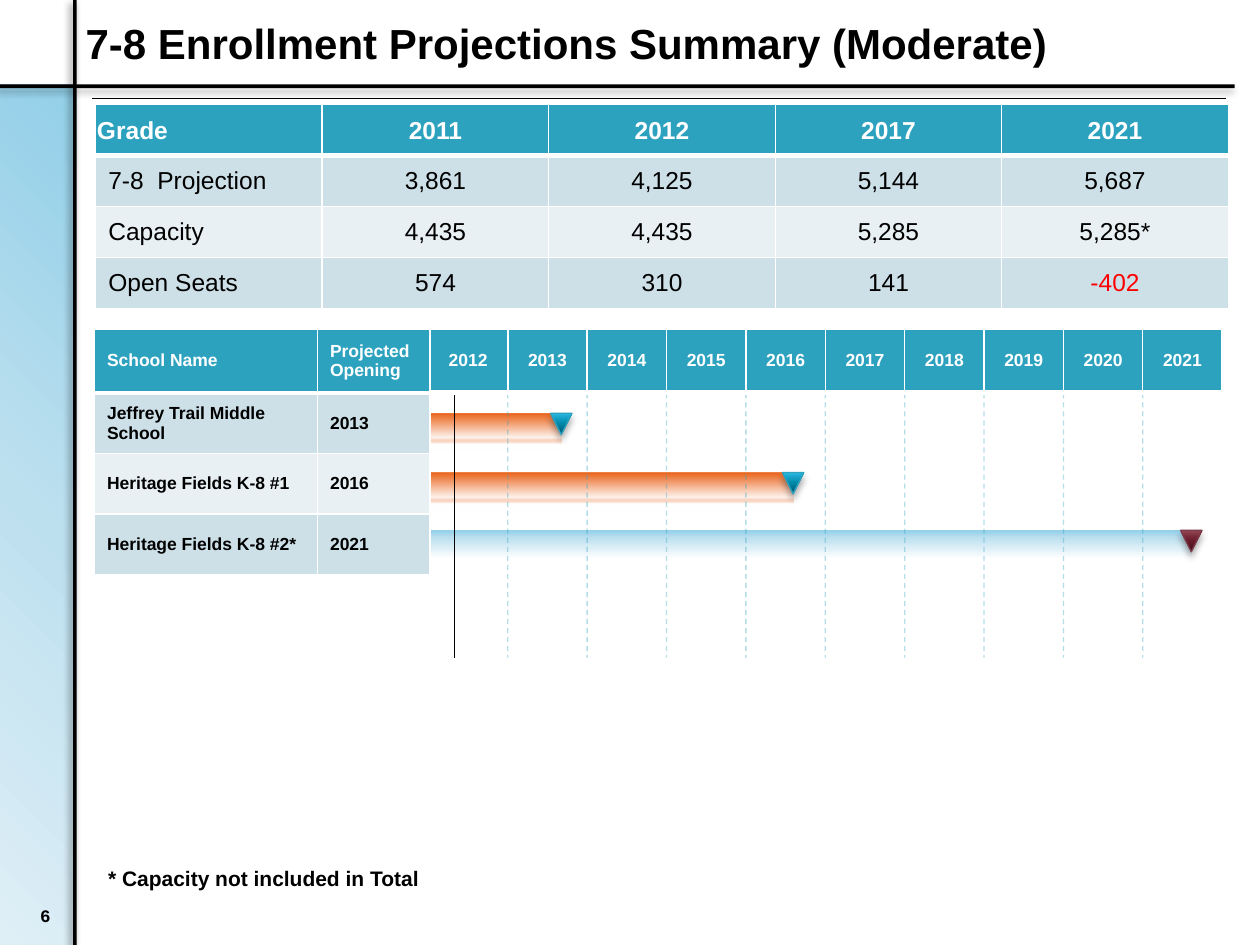
"""Builds the 7-8 enrollment projections slide with its school opening timeline."""
from lxml import etree
from pptx import Presentation
from pptx.dml.color import RGBColor
from pptx.enum.dml import MSO_LINE
from pptx.enum.shapes import MSO_CONNECTOR, MSO_SHAPE
from pptx.enum.text import MSO_ANCHOR, MSO_AUTO_SIZE, PP_ALIGN
from pptx.oxml.ns import qn
from pptx.util import Inches, Pt

BAR, MARKER = MSO_SHAPE.RECTANGLE, MSO_SHAPE.FLOWCHART_MERGE
STRAIGHT, DASH = MSO_CONNECTOR.STRAIGHT, MSO_LINE.DASH
LEFT, CENTER, RIGHT = PP_ALIGN.LEFT, PP_ALIGN.CENTER, PP_ALIGN.RIGHT
TOP, MIDDLE, BOTTOM = MSO_ANCHOR.TOP, MSO_ANCHOR.MIDDLE, MSO_ANCHOR.BOTTOM

BLACK = RGBColor(0x00, 0x00, 0x00)
WHITE = RGBColor(0xFF, 0xFF, 0xFF)
RED = RGBColor(0xFF, 0x00, 0x00)
TEAL = RGBColor(0x2D, 0xA2, 0xBF)
MAROON = RGBColor(0x7D, 0x3C, 0x4A)
ORANGE = RGBColor(0xEB, 0x64, 0x1B)
SKY = RGBColor(0x92, 0xCF, 0xE8)
PALE_SKY = RGBColor(0xBD, 0xE0, 0xEF)
ICE = RGBColor(0xDF, 0xEF, 0xF6)
BANDS = RGBColor(0xCD, 0xE0, 0xE8), RGBColor(0xE8, 0xF0, 0xF4)
TEAL_SHADES = (RGBColor(0x00, 0x53, 0x67), RGBColor(0x00, 0x86, 0xA7),
               RGBColor(0x0E, 0x9A, 0xBE), RGBColor(0x2C, 0xB9, 0xE3))
MAROON_SHADES = (RGBColor(0x42, 0x0F, 0x1A), RGBColor(0x68, 0x1A, 0x2B),
                 RGBColor(0x77, 0x29, 0x39), RGBColor(0x94, 0x47, 0x55))

SIDE_STOPS = [(0, SKY, 100), (50, PALE_SKY, 100), (100, ICE, 100)]
PLANNED_STOPS = [(0, ORANGE, 100), (65, ORANGE, 7), (81, WHITE, 100), (100, WHITE, 100)]
FUTURE_STOPS = [(0, SKY, 100), (20, PALE_SKY, 100), (75, WHITE, 100)]

ENROLLMENT = [
    ["Grade", "2011", "2012", "2017", "2021"],
    ["7-8  Projection", "3,861", "4,125", "5,144", "5,687"],
    ["Capacity", "4,435", "4,435", "5,285", "5,285*"],
    ["Open Seats", "574", "310", "141", "-402"],
]
SCHOOLS = [
    ["School Name", "Projected Opening"],
    ["Jeffrey Trail Middle School", "2013"],
    ["Heritage Fields K-8 #1", "2016"],
    ["Heritage Fields K-8 #2*", "2021"],
]
YEARS = [str(year) for year in range(2012, 2022)]
YEARS_LEFT, YEAR_WIDTH = 34, 6.3
TIMELINE = [
    (26.5, 44.6, 32.8, PLANNED_STOPS, TEAL_SHADES, TEAL),
    (33.1, 63, 37.5, PLANNED_STOPS, TEAL_SHADES, TEAL),
    (32.8, 94.6, 42.1, FUTURE_STOPS, MAROON_SHADES, MAROON),
]


def add(parent, tag, **attributes):
    """Append a child element with the given attributes."""
    return etree.SubElement(parent, qn(tag), {key: str(value) for key, value in attributes.items()})


def assign(target, formats):
    """Set each format value on the target."""
    for name, value in formats.items():
        setattr(target, name, value)


class SlideBuilder:
    """Holds the style and the current slide, measured on a 100 by 75 grid."""

    font_name = "Arial"
    columns, rows = 100, 75

    def __init__(self, deck):
        self.column = deck.slide_width / self.columns
        self.row = deck.slide_height / self.rows
        self.slide = deck.slides.add_slide(deck.slide_layouts[5])

    def place(self, left, top, width, height):
        """Turn grid units into slide lengths."""
        return (round(left * self.column), round(top * self.row),
                round(width * self.column), round(height * self.row))

    def style_text(self, paragraph, text, size, color, bold=True, align=LEFT, font=font_name):
        """Fill a paragraph with formatted text."""
        assign(paragraph, {"text": text, "alignment": align})
        assign(paragraph.font, {"name": font, "size": Pt(size), "bold": bold})
        paragraph.font.color.rgb = color

    def title(self, text, area):
        """Place and format the title placeholder."""
        heading = self.slide.shapes.title
        assign(heading, dict(zip(("left", "top", "width", "height"), self.place(*area))))
        assign(heading.text_frame, {"vertical_anchor": MIDDLE, "word_wrap": True,
                                    "auto_size": MSO_AUTO_SIZE.NONE})
        self.style_text(heading.text_frame.paragraphs[0], text, 24, BLACK)

    def label(self, text, area, size, anchor=TOP, **formats):
        """Add a wrapped text box."""
        frame = self.slide.shapes.add_textbox(*self.place(*area)).text_frame
        assign(frame, {"word_wrap": True, "vertical_anchor": anchor})
        self.style_text(frame.paragraphs[0], text, size, BLACK, **formats)

    def shape(self, preset, area, color=BLACK, stops=None, angle=None, outline=None, shadow=None):
        """Add a preset shape with a solid or gradient fill."""
        item = self.slide.shapes.add_shape(preset, *self.place(*area))
        item.shadow.inherit = False
        item.fill.solid()
        item.fill.fore_color.rgb = color
        if outline:
            item.line.color.rgb = outline
            item.line.width = Pt(0.75)
        else:
            item.line.fill.background()
        properties = item._element.spPr
        if stops:
            self.gradient(properties, stops, angle)
        if shadow:
            alpha, direction = shadow
            outer = add(properties.find(qn("a:effectLst")), "a:outerShdw", blurRad=Pt(4),
                        dist=Pt(3), dir=direction * 60000, rotWithShape=0)
            add(add(outer, "a:srgbClr", val=BLACK), "a:alpha", val=alpha * 1000)

    def gradient(self, properties, stops, angle):
        """Swap the solid fill for a linear gradient, or a radial one without an angle."""
        fill = etree.Element(qn("a:gradFill"), rotWithShape="1")
        stop_list = add(fill, "a:gsLst")
        for position, color, alpha in stops:
            tone = add(add(stop_list, "a:gs", pos=position * 1000), "a:srgbClr", val=color)
            if alpha < 100:
                add(tone, "a:alpha", val=alpha * 1000)
        if angle is None:
            add(add(fill, "a:path", path="circle"), "a:fillToRect", l=100000, b=100000)
        else:
            add(fill, "a:lin", ang=angle * 60000, scaled=0)
        properties.replace(properties.find(qn("a:solidFill")), fill)

    def line(self, left, top, right, bottom, color=BLACK, dash=None, alpha=100):
        """Add a thin straight line."""
        rule = self.slide.shapes.add_connector(
            STRAIGHT, *self.place(left, top, right, bottom))
        rule.line.color.rgb = color
        assign(rule.line, {"width": Pt(0.75), "dash_style": dash})
        properties = rule._element.spPr
        if alpha < 100:
            add(next(properties.iter(qn("a:srgbClr"))), "a:alpha", val=alpha * 1000)
        add(properties, "a:effectLst")

    def borders(self, cell, header):
        """Draw white cell borders, heavier below a header."""
        properties = cell._tc.get_or_add_tcPr()
        for side in ("L", "R", "T", "B"):
            edge = add(properties, "a:ln" + side, w=Pt(3 if header and side == "B" else 1))
            add(add(edge, "a:solidFill"), "a:srgbClr", val=WHITE)

    def table(self, data, area, widths, heights, size, bold_body=True, centered_from=1,
              header_margin=None):
        """Add a banded table with a coloured header row."""
        grid = self.slide.shapes.add_table(len(data), len(data[0]), *self.place(*area)).table
        for column, width in zip(grid.columns, widths):
            column.width = round(width * self.column)
        for row, height in zip(grid.rows, heights):
            row.height = round(height * self.row)
        for r, values in enumerate(data):
            for c, value in enumerate(values):
                cell, header = grid.cell(r, c), r == 0
                self.borders(cell, header)
                cell.fill.solid()
                cell.fill.fore_color.rgb = TEAL if header else BANDS[(r - 1) % 2]
                cell.vertical_anchor = MIDDLE
                if header and header_margin is not None:
                    assign(cell, {"margin_left": header_margin, "margin_right": header_margin,
                                  "margin_top": header_margin, "margin_bottom": 0})
                color = WHITE if header else RED if value.startswith("-") else BLACK
                self.style_text(cell.text_frame.paragraphs[0], value, size, color,
                                header or bold_body, CENTER if c >= centered_from else LEFT)


def main():
    """Build the slide and save it."""
    deck = Presentation()
    assign(deck, {"slide_width": Inches(10), "slide_height": Inches(7.5)})
    page = SlideBuilder(deck)

    page.shape(BAR, (0, 6.7, 5.8, 68.3), stops=SIDE_STOPS)
    page.shape(BAR, (5.8, 0, 0.3, 75), shadow=(40, 135))
    page.shape(BAR, (0, 6.7, 98, 0.3), shadow=(40, 135))
    page.line(7.3, 7.8, 97.3, 7.8)
    page.title("7-8 Enrollment Projections Summary (Moderate)", (5.8, 0, 80.7, 6.7))
    page.label("6", (1, 70, 4, 4), 10, BOTTOM, align=RIGHT, font="Courier New")

    page.table(ENROLLMENT, (7.6, 8.3, 89.9, 16.2), [17.98] * 5, [4.05] * 4, 14,
               bold_body=False, header_margin=Inches(0.01))

    for start, end, top, stops, _, _ in TIMELINE:
        page.shape(BAR, (start, top, end - start, 3), stops=stops, angle=90)
    for year in range(1, len(YEARS)):
        x = YEARS_LEFT + year * YEAR_WIDTH
        page.line(x, 26.2, x, 52.2, TEAL, DASH, 35)
    page.line(36.1, 26.2, 36.1, 52.2)
    page.table([YEARS], (YEARS_LEFT, 26.1, 63, 5), [YEAR_WIDTH] * 10, [5.05], 10,
               centered_from=0)
    page.table(SCHOOLS, (7.5, 26.1, 26.7, 19.5), [17.7, 8.95], [5.1, 4.8, 4.8, 4.8], 10,
               centered_from=2)
    for _, end, top, _, shades, outline in TIMELINE:
        stops = [(at, shade, 100) for at, shade in zip((0, 50, 70, 100), shades)]
        page.shape(MARKER, (end - 0.9, top, 1.7, 1.7), stops=stops, angle=270,
                   outline=outline, shadow=(35, 90))
    page.label("* Capacity not included in Total", (7.6, 68.2, 56.7, 3), 12)

    deck.save("out.pptx")


if __name__ == "__main__":
    main()
